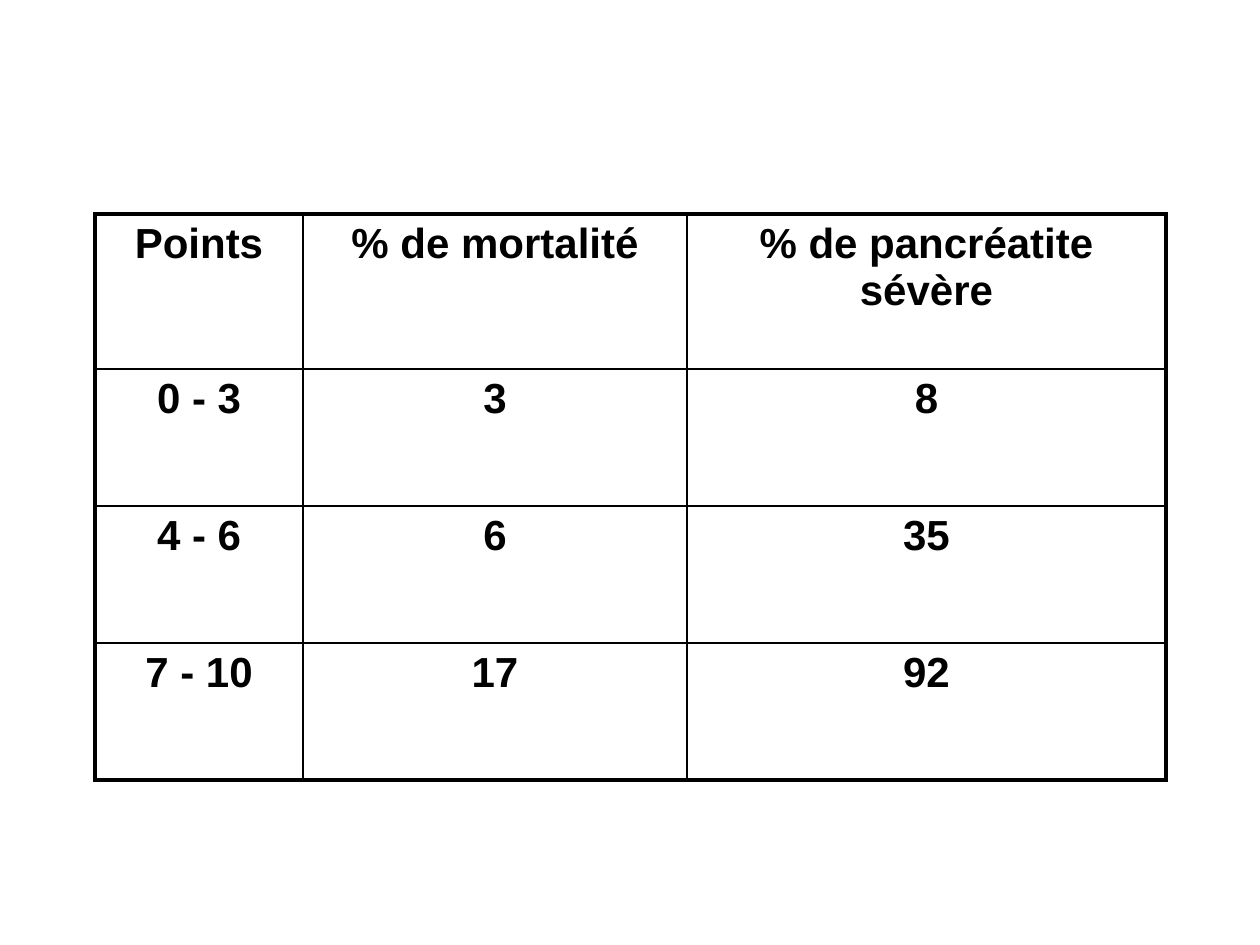
from dataclasses import dataclass

from lxml import etree
from pptx import Presentation
from pptx import util as u
from pptx.dml.color import RGBColor
from pptx.enum import text
from pptx.oxml import ns

PX_PER_INCH = 126
COLORS = {"ink": "000000", "page": "FFFFFF"}
FONT = "Arial"
FONT_SIZE = 24
OUTER_LINE, INNER_LINE = 2.25, 1


@dataclass(frozen=True)
class ScoreBand:
    points: str
    mortality: str
    severe: str
    height: int


BANDS = [
    ScoreBand("Points", "% de mortalité", "% de pancréatite sévère", 155),
    ScoreBand("0 - 3", "3", "8", 137),
    ScoreBand("4 - 6", "6", "35", 137),
    ScoreBand("7 - 10", "17", "92", 137),
]
COLUMN_WIDTHS = [208, 384, 479]
LEFT, TOP = 95, 214


def px(length: int) -> u.Emu:
    return u.Emu(round(length * u.Inches(1) / PX_PER_INCH))


def draw_borders(cell, outer_sides: dict[str, bool]) -> None:
    """Give each side a solid line, thicker on the table's rim."""
    properties = cell._tc.get_or_add_tcPr()
    for position, (side, is_outer) in enumerate(outer_sides.items()):
        width = u.Pt(OUTER_LINE if is_outer else INNER_LINE)
        line = etree.Element(ns.qn(f"a:ln{side}"), w=str(int(width)))
        fill = etree.SubElement(line, ns.qn("a:solidFill"))
        etree.SubElement(fill, ns.qn("a:srgbClr"), val=COLORS["ink"])
        properties.insert(position, line)


def write_cell(cell, wording: str) -> None:
    cell.fill.background()
    cell.text_frame.text = wording
    paragraph = cell.text_frame.paragraphs[0]
    paragraph.alignment = text.PP_ALIGN.CENTER
    font = paragraph.runs[0].font
    font.name, font.size, font.bold = FONT, u.Pt(FONT_SIZE), True
    font.color.rgb = RGBColor.from_string(COLORS["ink"])


def draw_scores(slide, bands: list[ScoreBand]) -> None:
    last_row, last_column = len(bands) - 1, len(COLUMN_WIDTHS) - 1
    scores = slide.shapes.add_table(
        len(bands), len(COLUMN_WIDTHS), px(LEFT), px(TOP),
        px(sum(COLUMN_WIDTHS)), px(sum(band.height for band in bands)),
    ).table
    scores.first_row = scores.horz_banding = False

    for column, width in zip(scores.columns, COLUMN_WIDTHS):
        column.width = px(width)
    for r, band in enumerate(bands):
        scores.rows[r].height = px(band.height)
        for c, wording in enumerate((band.points, band.mortality, band.severe)):
            cell = scores.cell(r, c)
            write_cell(cell, wording)
            draw_borders(cell, {"L": c == 0, "R": c == last_column,
                                "T": r == 0, "B": r == last_row})


def main() -> None:
    # Page
    deck = Presentation()
    deck.slide_width, deck.slide_height = px(1260), px(945)
    slide = deck.slides.add_slide(deck.slide_layouts[6])
    slide.background.fill.solid()
    slide.background.fill.fore_color.rgb = RGBColor.from_string(COLORS["page"])

    # Mortality and severity by score
    draw_scores(slide, BANDS)
    deck.save("out.pptx")


if __name__ == "__main__":
    main()
